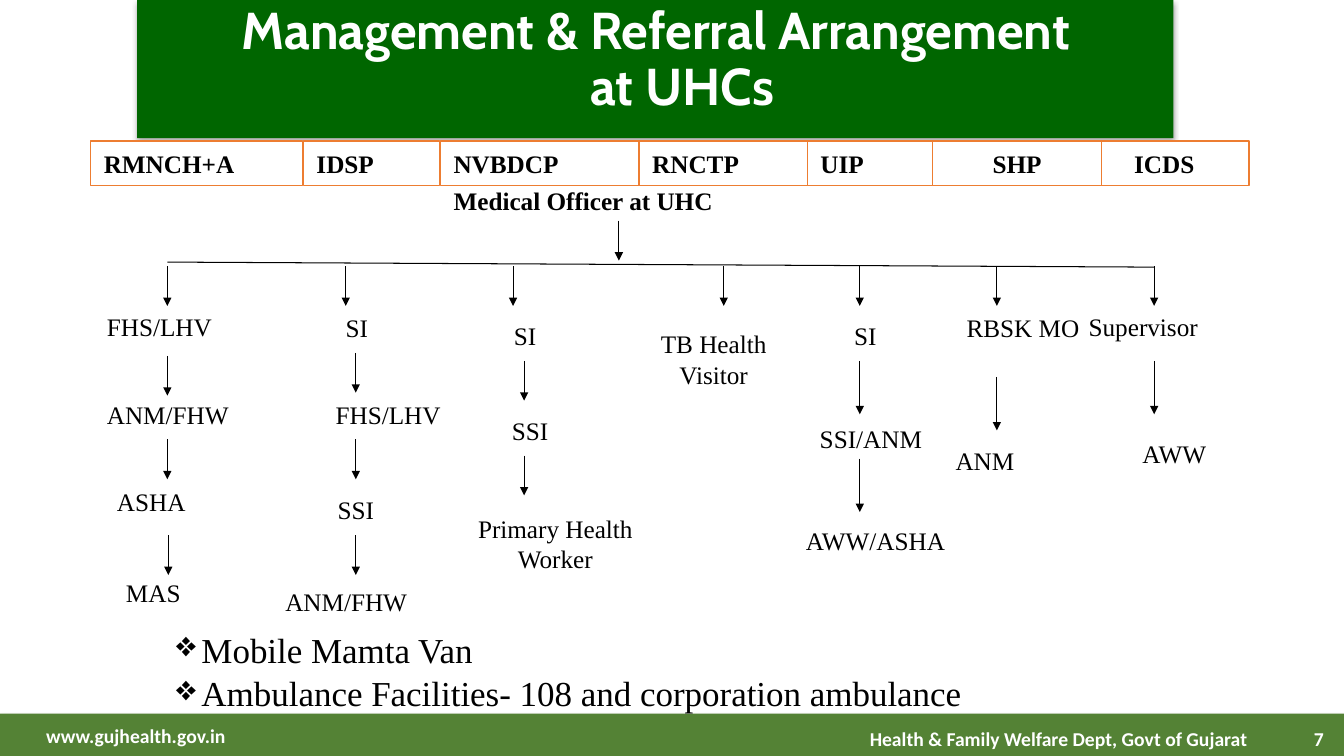
from lxml.etree import SubElement
from pptx import Presentation
from pptx.dml.color import RGBColor
from pptx.enum.shapes import MSO_CONNECTOR as Connector, MSO_SHAPE as Shape
from pptx.enum.text import MSO_ANCHOR as Anchor, PP_ALIGN as Align
from pptx.oxml.ns import qn
from pptx.util import Inches, Pt

COLORS = {"band": "006600", "footer": "548235", "border": "ED7D31",
          "light": "FFFFFF", "ink": "000000"}
COLUMNS, ROWS = 80, 45
SERIF = "Times New Roman"
LINE_ROWS = 2.64
SHORT, LONG = 2.37, 3.18

PROGRAMMES = [
    ("RMNCH+A", 5.4, 12.6, Align.LEFT),
    ("IDSP", 18.06, 8.1, Align.LEFT),
    ("NVBDCP", 26.22, 11.88, Align.LEFT),
    ("RNCTP", 38.04, 10.08, Align.LEFT),
    ("UIP", 48.06, 11.34, Align.LEFT),
    ("ICDS", 64.26, 10.08, Align.CENTER),
    ("SHP", 55.5, 10.08, Align.CENTER),
]
STAFF = [
    ("FHS/LHV", 5.58, 18.12, 12.6, Align.LEFT),
    ("ANM/FHW", 5.58, 23.34, 12.6, Align.LEFT),
    ("ASHA", 6.18, 28.5, 12.6, Align.LEFT),
    ("MAS", 6.72, 33.96, 12.6, Align.LEFT),
    ("SI", 16.2, 18.18, 10.08, Align.CENTER),
    ("FHS/LHV", 16.8, 23.34, 12.6, Align.CENTER),
    ("SSI", 14.94, 28.98, 12.48, Align.CENTER),
    ("ANM/FHW", 16.2, 34.5, 12.6, Align.LEFT),
    ("SI", 26.22, 18.66, 10.08, Align.CENTER),
    ("SSI", 25.32, 24.3, 12.48, Align.CENTER),
    ("Primary Health Worker", 26.82, 30.12, 12.48, Align.CENTER),
    ("TB Health Visitor", 37.44, 19.14, 10.08, Align.CENTER),
    ("SI", 46.2, 18.66, 10.62, Align.CENTER),
    ("SSI/ANM", 46.8, 24.78, 10.08, Align.CENTER),
    ("AWW/ASHA", 45.54, 30.84, 13.14, Align.CENTER),
    ("RBSK MO", 56.76, 18.18, 10.08, Align.LEFT),
    ("ANM", 56.1, 26.1, 10.08, Align.LEFT),
    ("Supervisor", 64.02, 18.12, 11.34, Align.LEFT),
    ("AWW", 64.86, 25.68, 10.08, Align.CENTER),
]
BRANCHES = [9.96, 20.58, 30.54, 43.08, 51.18, 59.34, 68.7]
STEPS = [
    (9.96, SHORT, [21.18, 26.16]),
    (10.02, SHORT, [31.86]),
    (21.18, SHORT, [21, 26.16, 31.86]),
    (31.2, SHORT, [21.48, 27.12]),
    (51.18, LONG, [21.48, 27.3]),
    (59.34, LONG, [22.44]),
    (68.7, LONG, [21.48]),
    (36.84, SHORT, [13.14]),
]
SERVICES = ["Mobile Mamta Van",
            "Ambulance Facilities- 108 and corporation ambulance"]


class ReferralSlide:
    def __init__(self, presentation):
        self.column = presentation.slide_width / COLUMNS
        self.row = presentation.slide_height / ROWS
        self.slide = presentation.slides.add_slide(presentation.slide_layouts[6])

    def place(self, left, top, width, height):
        return (round(left * self.column), round(top * self.row),
                round(width * self.column), round(height * self.row))

    def color(self, name):
        return RGBColor.from_string(COLORS[name])

    def box(self, area, fill, border=None):
        shape = self.slide.shapes.add_shape(Shape.RECTANGLE, *self.place(*area))
        shape.shadow.inherit = False
        shape.fill.solid()
        shape.fill.fore_color.rgb = self.color(fill)
        if border:
            shape.line.color.rgb = self.color(border)
            shape.line.width = Pt(1)
        else:
            shape.line.fill.background()
        return shape

    def bar(self, area, fill):
        shape = self.box(area, fill)
        effects = shape._element.spPr.find(qn("a:effectLst"))
        shadow = SubElement(effects, qn("a:outerShdw"), blurRad=str(Pt(3.5)),
                            dist=str(Pt(2.2)), dir="5400000", rotWithShape="0")
        tone = SubElement(shadow, qn("a:srgbClr"), val=COLORS["ink"])
        SubElement(tone, qn("a:alpha"), val="32000")

    def text_box(self, area):
        shape = self.slide.shapes.add_textbox(*self.place(*area))
        shape.text_frame.word_wrap = True
        return shape.text_frame

    def run(self, paragraph, text, size, font=SERIF, color="ink", bold=False):
        run = paragraph.add_run()
        run.text = text
        run.font.name = font
        run.font.size = Pt(size)
        run.font.bold = bold
        run.font.color.rgb = self.color(color)

    def label(self, frame, text, align, bold=False):
        frame.word_wrap = True
        frame.vertical_anchor = Anchor.TOP
        frame.margin_left = frame.margin_right = Inches(0.13)
        frame.margin_top = frame.margin_bottom = Inches(0.07)
        paragraph = frame.paragraphs[0]
        paragraph.alignment = align
        self.run(paragraph, text, 18, bold=bold)

    def indent(self, paragraph, left, first):
        properties = paragraph._p.get_or_add_pPr()
        properties.set("marL", str(Inches(left)))
        properties.set("indent", str(Inches(first)))
        return properties

    def title(self, area, lines):
        frame = self.text_box(area)
        frame.vertical_anchor = Anchor.MIDDLE
        paragraph = frame.paragraphs[0]
        self.indent(paragraph, 0.53, -0.41)
        paragraph.alignment = Align.CENTER
        paragraph.line_spacing = 0.9
        for number, line in enumerate(lines):
            if number:
                paragraph.add_line_break()
            self.run(paragraph, line, 37, "Cabin", "light", True)

    def footer(self, area, text, align=Align.LEFT):
        paragraph = self.text_box(area).paragraphs[0]
        paragraph.alignment = align
        self.run(paragraph, text, 14, "Calibri", "light", True)

    def bullets(self, area, items):
        frame = self.text_box(area)
        for number, item in enumerate(items):
            paragraph = frame.add_paragraph() if number else frame.paragraphs[0]
            properties = self.indent(paragraph, 0.25, -0.25)
            SubElement(properties, qn("a:buChar"), char="❖")
            paragraph.line_spacing = 0.7
            if number:
                paragraph.space_before = Pt(10)
            self.run(paragraph, item, 25)

    def line(self, start, end, arrow=True):
        connector = self.slide.shapes.add_connector(
            Connector.STRAIGHT, *self.place(*start, *end))
        connector.line.color.rgb = self.color("ink")
        connector.line.width = Pt(0.75)
        properties = connector._element.spPr
        if arrow:
            SubElement(properties.find(qn("a:ln")), qn("a:tailEnd"), type="triangle")
        SubElement(properties, qn("a:effectLst"))


def main():
    presentation = Presentation()
    presentation.slide_width = Inches(13.33)
    presentation.slide_height = Inches(7.5)
    page = ReferralSlide(presentation)

    page.bar((8.16, 0, 61.68, 8.22), "band")
    page.bar((0, 42.48, COLUMNS, 2.52), "footer")
    page.footer((51.18, 42.96, 24, 2.04), "Health & Family Welfare Dept, Govt of Gujarat")
    page.footer((2.16, 42.78, 12.66, 2.04), "www.gujhealth.gov.in")
    page.footer((77, 42.96, 3, 2.04), "7", Align.CENTER)
    page.title((3.36, -0.12, 71.34, 7.5),
               ["Management & Referral Arrangement ", "at UHCs"])

    for name, left, width, align in PROGRAMMES:
        cell = page.box((left, 8.4, width, LINE_ROWS), "light", "border")
        page.label(cell.text_frame, name, align, bold=True)
    officer = page.text_box((26.22, 10.62, 23.1, LINE_ROWS))
    page.label(officer, "Medical Officer at UHC", Align.LEFT, bold=True)
    for role, left, top, width, align in STAFF:
        page.label(page.text_box((left, top, width, LINE_ROWS)), role, align)

    page.line((BRANCHES[0], 15.6), (BRANCHES[-1], 15.9), arrow=False)
    for column in BRANCHES:
        page.line((column, 15.84), (column, 15.84 + SHORT))
    for column, length, tops in STEPS:
        for top in tops:
            page.line((column, top), (column, top + length))

    page.bullets((9.9, 37.8, 65.58, 5.16), SERVICES)
    presentation.save("out.pptx")


if __name__ == "__main__":
    main()
